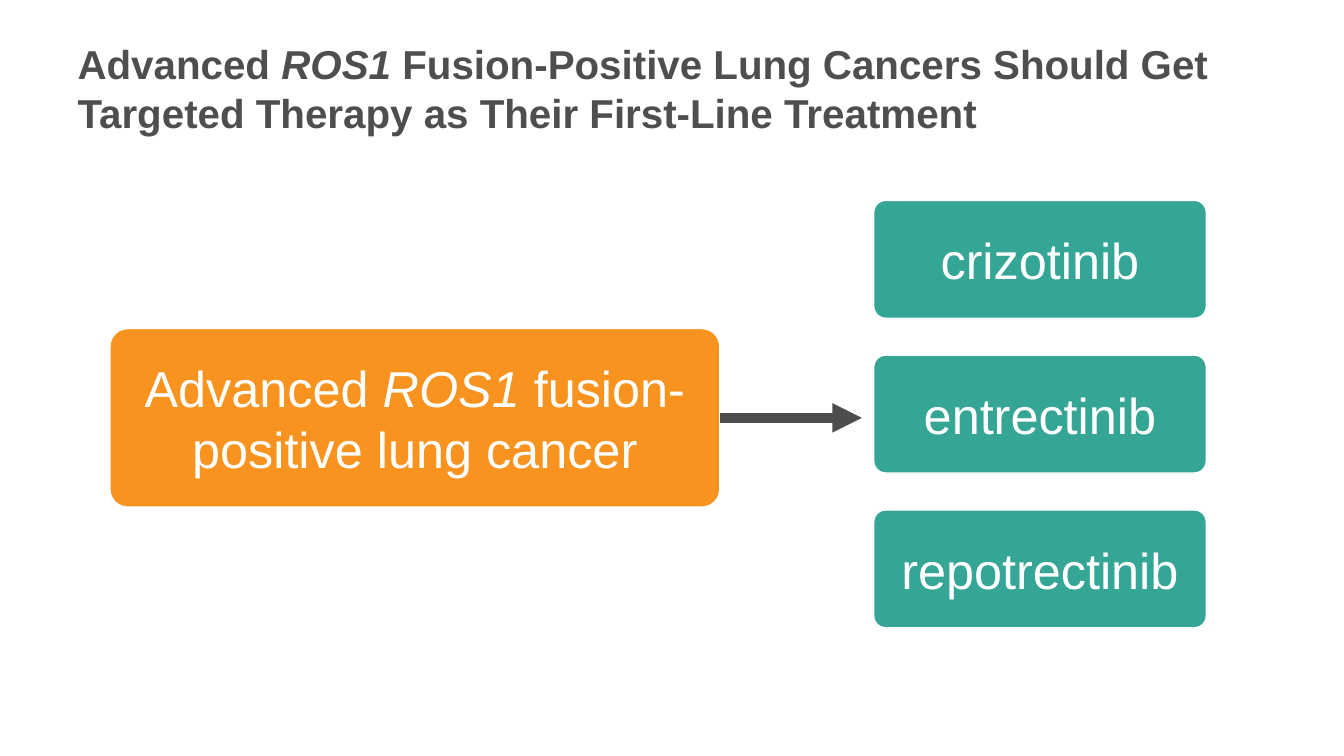
"""Builds the slide on first-line therapy for ROS1 fusion-positive lung cancer."""
from lxml.etree import SubElement as Sub
from pptx import Presentation
from pptx.dml.color import RGBColor
from pptx.enum.shapes import MSO_CONNECTOR as Link, MSO_SHAPE as Shape
from pptx.enum.text import MSO_ANCHOR as Anchor, MSO_AUTO_SIZE as Fit, PP_ALIGN as Align
from pptx.oxml.ns import qn
from pptx.util import Cm, Pt

GREY, ORANGE, TEAL, WHITE = "4D4E4D", "F7931E", "35A696", "FFFFFF"
DRUGS = ["crizotinib", "entrectinib", "repotrectinib"]
TOP, STEP = 5.05, 3.9
TITLE = {"size": Pt(28.8), "bold": True, "name": "Arial"}
LABEL = {"size": Pt(36), "bold": False, "name": "Arial"}


def tint(hue):
    return RGBColor.from_string(hue)


def put(obj, vals):
    for key, val in vals.items():
        setattr(obj, key, val)


def write(shape, runs, font, hue, align):
    frame = shape.text_frame
    put(frame, {"word_wrap": True, "auto_size": Fit.NONE,
                "vertical_anchor": Anchor.MIDDLE})
    para = frame.paragraphs[0]
    para.alignment = align
    for text, slant in runs:
        run = para.add_run()
        run.text = text
        put(run.font, {**font, "italic": slant})
        run.font.color.rgb = tint(hue)


def add_title(slide, runs):
    title = slide.shapes.title
    put(title, {"left": Cm(1.7), "top": Cm(0.56),
                "width": Cm(29.85), "height": Cm(3.3)})
    write(title, runs, TITLE, GREY, Align.LEFT)


def add_box(slide, area, fill, runs):
    box = slide.shapes.add_shape(Shape.ROUNDED_RECTANGLE, *map(Cm, area))
    box.adjustments[0] = 0.1
    box.shadow.inherit = False
    box.fill.solid()
    box.fill.fore_color.rgb = tint(fill)
    box.line.color.rgb = tint(WHITE)
    box.line.width = Pt(1)
    write(box, runs, LABEL, WHITE, Align.CENTER)
    return box


def add_arrow(slide, box, end):
    mid = box.top + box.height // 2
    arrow = slide.shapes.add_connector(
        Link.STRAIGHT, box.left + box.width, mid, Cm(end), mid)
    arrow.begin_connect(box, 3)
    arrow.line.color.rgb = tint("4D4D4D")
    arrow.line.width = Pt(7)
    Sub(arrow.line._get_or_add_ln(), qn("a:tailEnd"), type="triangle")
    Sub(arrow._element.spPr, qn("a:effectLst"))


def main():
    deck = Presentation()
    put(deck, {"slide_width": Cm(33.87), "slide_height": Cm(19.05)})
    slide = deck.slides.add_slide(deck.slide_layouts[5])
    add_title(slide, [
        ("Advanced ", False), ("ROS1", True),
        (" Fusion-Positive Lung Cancers Should Get Targeted Therapy"
         " as Their First-Line Treatment", False)])
    cancer = add_box(slide, (2.77, 8.28, 15.37, 4.5), ORANGE, [
        ("Advanced ", False), ("ROS1", True),
        (" fusion-positive lung cancer", False)])
    add_arrow(slide, cancer, 21.72)
    for row, drug in enumerate(DRUGS):
        add_box(slide, (22.02, TOP + row * STEP, 8.38, 2.97), TEAL,
                [(drug, False)])
    deck.save("out.pptx")


if __name__ == "__main__":
    main()
